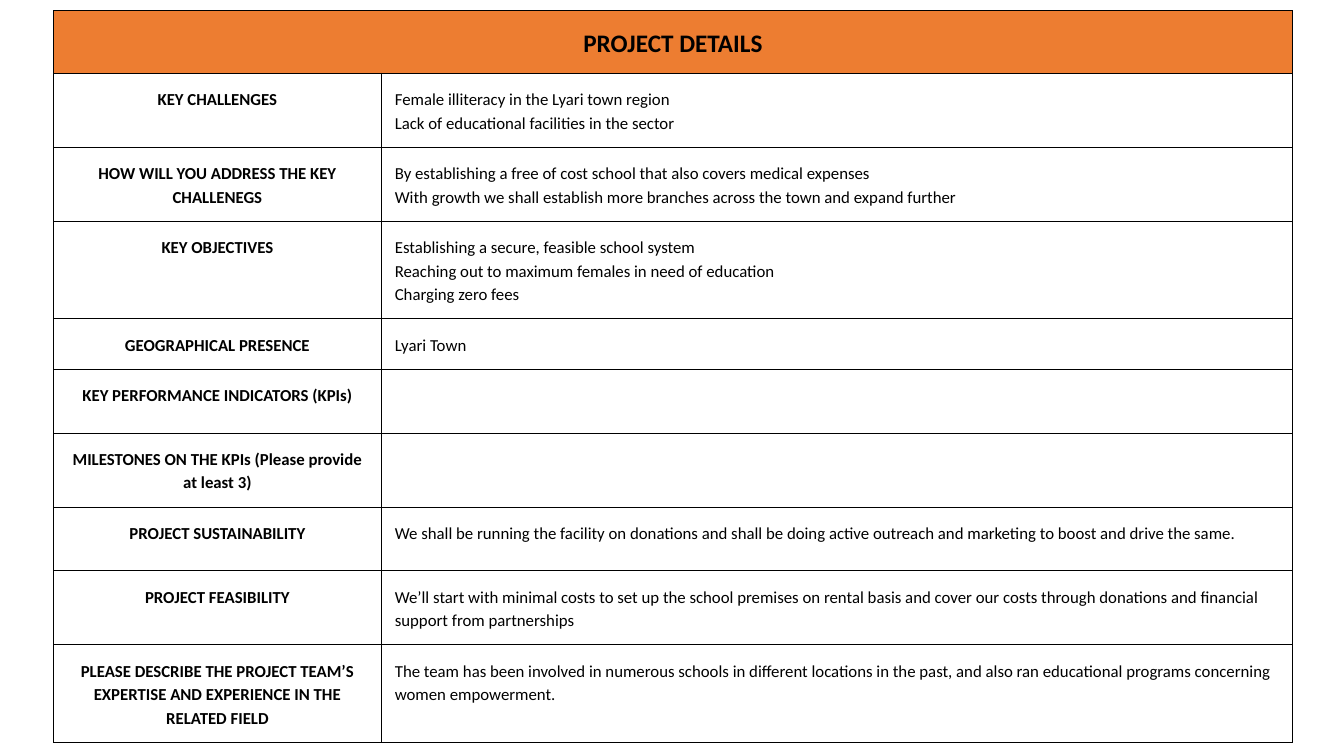
from lxml.etree import SubElement
from pptx import Presentation
from pptx.dml.color import RGBColor
from pptx.enum.text import PP_ALIGN
from pptx.oxml.ns import qn
from pptx.util import Cm, Pt


class Theme:
    font = "Calibri"
    ink = RGBColor(0x00, 0x00, 0x00)
    banner = RGBColor(0xED, 0x7D, 0x31)
    title_size = Pt(18)
    body_size = Pt(12)
    line_spacing = 1.15
    border_width = Pt(0.75)
    padding = Cm(0.34)


# Topic, answer (\n starts a paragraph, \v breaks a line), row height in cm
TOPICS = [
    ("KEY CHALLENGES",
     "Female illiteracy in the Lyari town region\vLack of educational facilities in the sector", 1.75),
    ("HOW WILL YOU ADDRESS THE KEY CHALLENEGS",
     "By establishing a free of cost school that also covers medical expenses\n"
     "With growth we shall establish more branches across the town and expand further", 1.75),
    ("KEY OBJECTIVES",
     "Establishing a secure, feasible school system\v"
     "Reaching out to maximum females in need of education\vCharging zero fees", 1.7),
    ("GEOGRAPHICAL PRESENCE", "Lyari Town", 1.22),
    ("KEY PERFORMANCE INDICATORS (KPIs)", "", 1.6),
    ("MILESTONES ON THE KPIs (Please provide at least 3)", "", 1.27),
    ("PROJECT SUSTAINABILITY",
     "We shall be running the facility on donations and shall be doing active outreach "
     "and marketing to boost and drive the same.", 1.6),
    ("PROJECT FEASIBILITY",
     "We’ll start with minimal costs to set up the school premises on rental basis and "
     "cover our costs through donations and financial support from partnerships", 1.6),
    ("PLEASE DESCRIBE THE PROJECT TEAM’S EXPERTISE AND EXPERIENCE IN THE RELATED FIELD",
     "The team has been involved in numerous schools in different locations in the past, "
     "and also ran educational programs concerning women empowerment.", 1.75),
]
TITLE_HEIGHT = 1.42
COLUMN_WIDTHS = [8.26, 22.96]


def add_borders(cell):
    properties = cell._tc.get_or_add_tcPr()
    for side in ("a:lnL", "a:lnR", "a:lnT", "a:lnB"):
        line = SubElement(properties, qn(side), w=str(Theme.border_width))
        fill = SubElement(line, qn("a:solidFill"))
        SubElement(fill, qn("a:srgbClr"), val=str(Theme.ink))


def write_cell(cell, text, size, bold, align):
    cell.margin_left = cell.margin_right = Theme.padding
    cell.margin_top = cell.margin_bottom = Theme.padding
    cell.text_frame.text = text
    for paragraph in cell.text_frame.paragraphs:
        paragraph.alignment = align
        paragraph.line_spacing = Theme.line_spacing
        paragraph.font.name = Theme.font
        paragraph.font.size = size
        paragraph.font.bold = bold
        paragraph.font.color.rgb = Theme.ink


presentation = Presentation()
presentation.slide_width = Cm(33.87)
presentation.slide_height = Cm(19.05)
slide = presentation.slides.add_slide(presentation.slide_layouts[6])

# Table grid
heights = [TITLE_HEIGHT] + [height for _, _, height in TOPICS]
details = slide.shapes.add_table(
    len(heights), len(COLUMN_WIDTHS), Cm(1.35), Cm(0.27),
    Cm(sum(COLUMN_WIDTHS)), Cm(sum(heights))).table
details.first_row = False
details.horz_banding = False
for column, width in zip(details.columns, COLUMN_WIDTHS):
    column.width = Cm(width)
for row, height in zip(details.rows, heights):
    row.height = Cm(height)
for cell in details.iter_cells():
    add_borders(cell)
    cell.fill.background()

# Title banner
banner = details.cell(0, 0)
banner.merge(details.cell(0, 1))
banner.fill.solid()
banner.fill.fore_color.rgb = Theme.banner
write_cell(banner, "PROJECT DETAILS", Theme.title_size, True, PP_ALIGN.CENTER)

# Topics and answers
for index, (topic, answer, _) in enumerate(TOPICS, start=1):
    write_cell(details.cell(index, 0), topic, Theme.body_size, True, PP_ALIGN.CENTER)
    write_cell(details.cell(index, 1), answer, Theme.body_size, False, PP_ALIGN.LEFT)

presentation.save("out.pptx")
